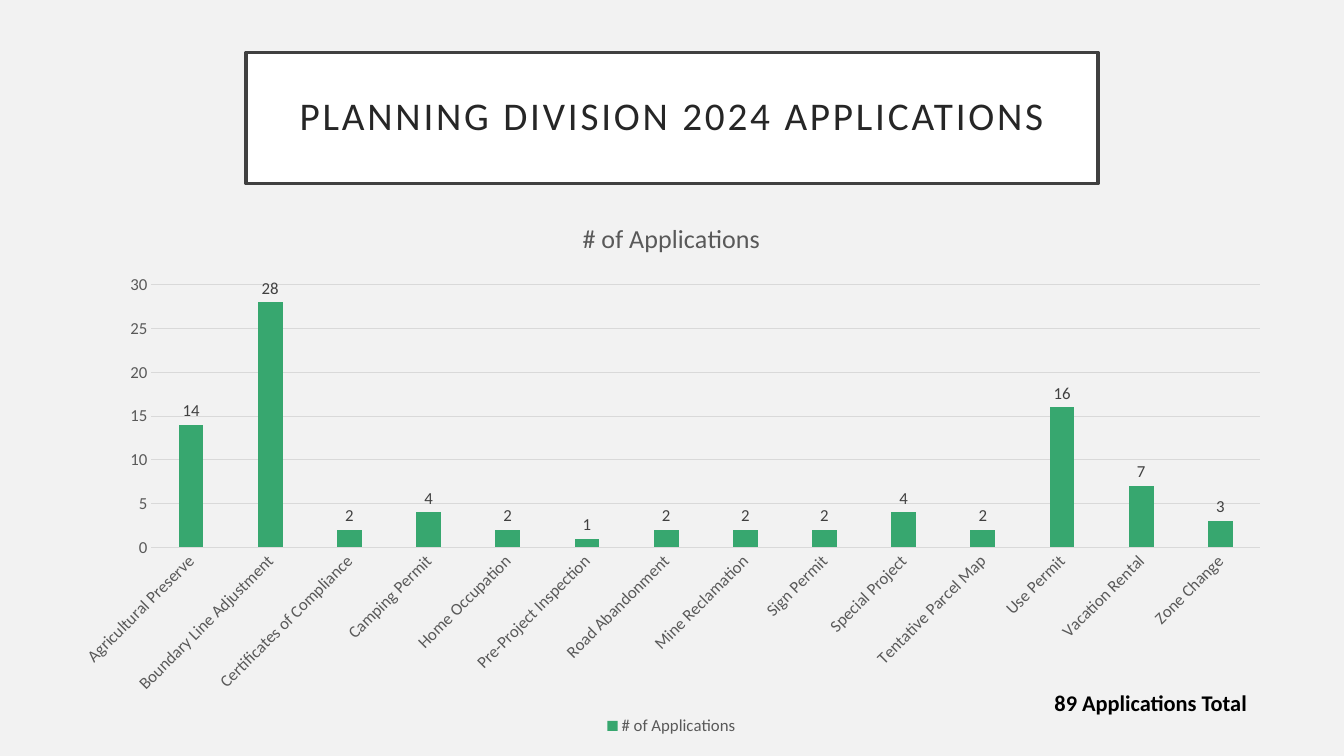
from dataclasses import dataclass

from pptx import Presentation
from pptx.chart.data import CategoryChartData
from pptx.dml.color import RGBColor
from pptx.enum.chart import XL_CHART_TYPE, XL_LABEL_POSITION, XL_LEGEND_POSITION, XL_TICK_MARK
from pptx.enum.text import MSO_ANCHOR, MSO_AUTO_SIZE, PP_ALIGN
from pptx.util import Inches, Pt

COLUMN = XL_CHART_TYPE.COLUMN_CLUSTERED
OUTSIDE = XL_LABEL_POSITION.OUTSIDE_END
BOTTOM = XL_LEGEND_POSITION.BOTTOM
NO_TICK = XL_TICK_MARK.NONE
MIDDLE = MSO_ANCHOR.MIDDLE
NO_FIT = MSO_AUTO_SIZE.NONE
CENTER = PP_ALIGN.CENTER

SERIES = "# of Applications"
COUNTS = {
    "Agricultural Preserve": 14,
    "Boundary Line Adjustment": 28,
    "Certificates of Compliance": 2,
    "Camping Permit": 4,
    "Home Occupation": 2,
    "Pre-Project Inspection": 1,
    "Road Abandonment": 2,
    "Mine Reclamation": 2,
    "Sign Permit": 2,
    "Special Project": 4,
    "Tentative Parcel Map": 2,
    "Use Permit": 16,
    "Vacation Rental": 7,
    "Zone Change": 3,
}


@dataclass(frozen=True)
class Theme:
    font: str = "Calibri"
    back: str = "F2F2F2"
    panel: str = "FFFFFF"
    frame: str = "404040"
    head: str = "262626"
    ink: str = "000000"
    soft: str = "595959"
    grid: str = "D9D9D9"
    bar: str = "37A76F"
    head_size: float = 28
    chart_size: float = 18.6
    note_size: float = 16
    label_size: float = 12


def color(code):
    return RGBColor.from_string(code)


def style(font, name, size, tint, bold=False):
    font.name = name
    font.size = Pt(size)
    font.color.rgb = color(tint)
    font.bold = bold


def write(frame, text, name, size, tint, bold=False, align=None, leading=None, track=None):
    """Put one formatted line of text in a frame; track is letter spacing in points."""
    para = frame.paragraphs[0]
    para.alignment = align
    para.line_spacing = leading
    run = para.add_run()
    run.text = text
    style(run.font, name, size, tint, bold)
    if track:
        run.font._element.set("spc", str(track * 100))


def stroke(line, tint, width):
    line.color.rgb = color(tint)
    line.width = Pt(width)


class Page:
    def __init__(self, deck, theme):
        self.theme = theme
        self.slide = deck.slides.add_slide(deck.slide_layouts[5])
        fill = self.slide.background.fill
        fill.solid()
        fill.fore_color.rgb = color(theme.back)

    def title(self, text, left, top, width, height):
        look = self.theme
        box = self.slide.shapes.title
        box.left, box.top = Inches(left), Inches(top)
        box.width, box.height = Inches(width), Inches(height)
        box.fill.solid()
        box.fill.fore_color.rgb = color(look.panel)
        stroke(box.line, look.frame, 2.5)
        frame = box.text_frame
        frame.word_wrap = True
        frame.auto_size = NO_FIT
        frame.vertical_anchor = MIDDLE
        frame.margin_left = frame.margin_right = Inches(0.2)
        frame.margin_top = frame.margin_bottom = Inches(0.2)
        write(frame, text, look.font, look.head_size, look.head,
              align=CENTER, leading=0.9, track=2)

    def note(self, text, left, top, width, height):
        look = self.theme
        box = self.slide.shapes.add_textbox(
            Inches(left), Inches(top), Inches(width), Inches(height))
        box.text_frame.word_wrap = True
        write(box.text_frame, text, look.font, look.note_size, look.ink, bold=True)

    def columns(self, name, counts, left, top, width, height):
        look = self.theme
        data = CategoryChartData()
        data.categories = list(counts)
        data.add_series(name, list(counts.values()))
        chart = self.slide.shapes.add_chart(
            COLUMN, Inches(left), Inches(top), Inches(width), Inches(height), data).chart
        style(chart.font, look.font, 10, look.ink)

        chart.has_title = True
        write(chart.chart_title.text_frame, name, look.font, look.chart_size, look.soft)
        chart.chart_title.include_in_layout = False
        chart.has_legend = True
        chart.legend.position = BOTTOM
        chart.legend.include_in_layout = False
        style(chart.legend.font, look.font, look.label_size, look.soft)

        self.axes(chart)
        self.bars(chart.plots[0])

    def axes(self, chart):
        look = self.theme
        across, up = chart.category_axis, chart.value_axis
        for axis in (across, up):
            axis.major_tick_mark = axis.minor_tick_mark = NO_TICK
            style(axis.tick_labels.font, look.font, look.label_size, look.soft)
        stroke(across.format.line, look.grid, 0.75)
        across._element.txPr.bodyPr.set("rot", str(-45 * 60000))
        up.minimum_scale, up.maximum_scale, up.major_unit = 0, 30, 5
        up.format.line.fill.background()
        up.has_major_gridlines = True
        stroke(up.major_gridlines.format.line, look.grid, 0.75)

    def bars(self, plot):
        look = self.theme
        plot.gap_width, plot.overlap = 219, -27
        plot.vary_by_categories = False
        series = plot.series[0]
        series.format.fill.solid()
        series.format.fill.fore_color.rgb = color(look.bar)
        labels = series.data_labels
        labels.show_value = True
        labels.position = OUTSIDE
        style(labels.font, look.font, look.label_size, look.frame)


def main():
    deck = Presentation()
    deck.slide_width, deck.slide_height = Inches(13.33), Inches(7.5)
    page = Page(deck, Theme())
    page.title("PLANNING DIVISION 2024 APPLICATIONS", 2.44, 0.52, 8.45, 1.3)
    page.columns(SERIES, COUNTS, 0.58, 1.98, 12.16, 5.36)
    page.note(f"{sum(COUNTS.values())} Applications Total", 10.36, 6.79, 2.72, 0.37)
    deck.save("out.pptx")


if __name__ == "__main__":
    main()
